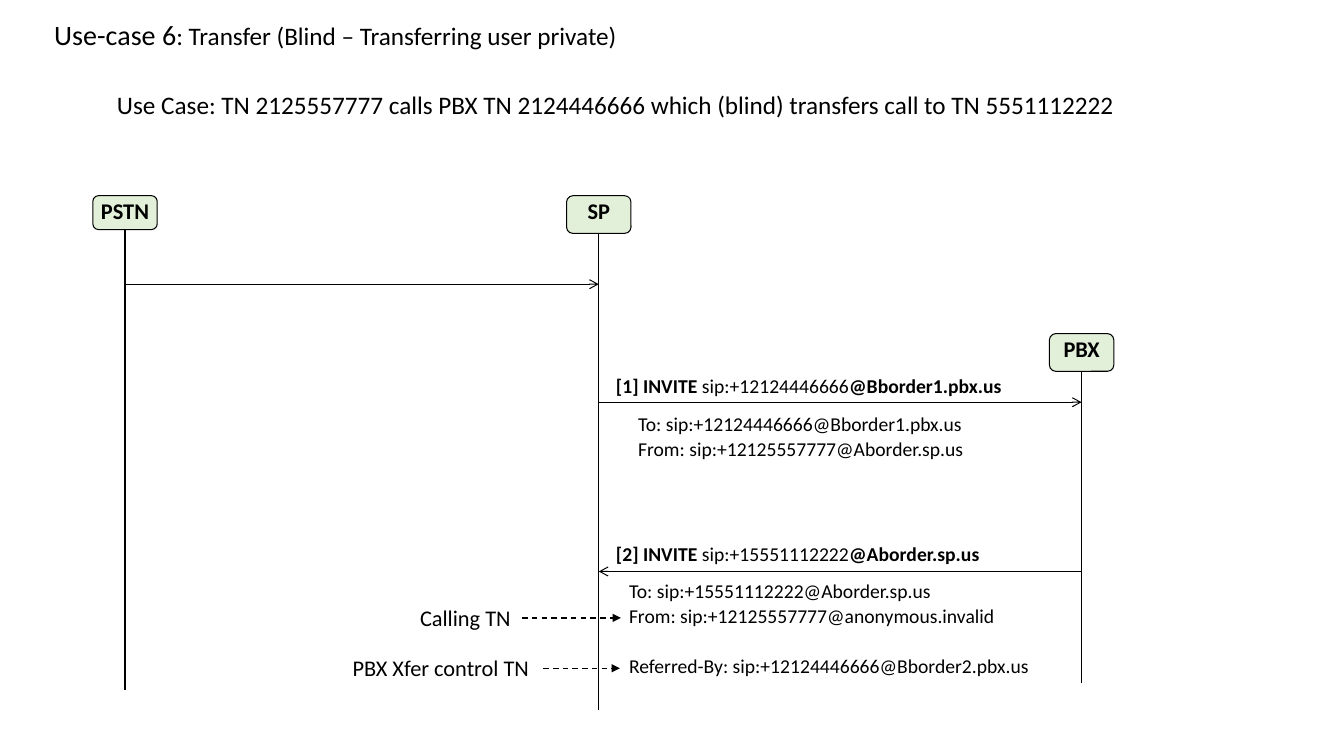
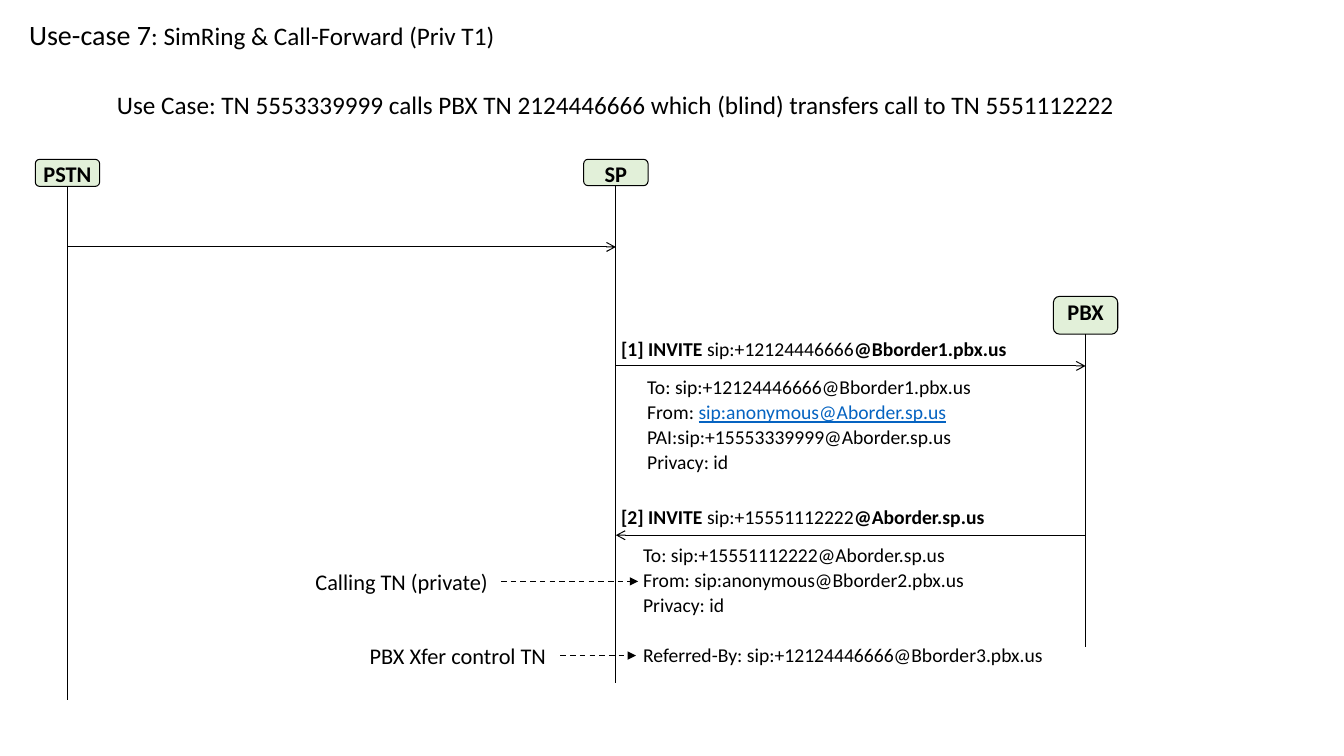
from lxml import etree
from pptx import Presentation
from pptx.dml.color import RGBColor
from pptx.enum.dml import MSO_LINE
from pptx.enum.shapes import MSO_CONNECTOR, MSO_SHAPE
from pptx.enum.text import MSO_ANCHOR, PP_ALIGN
from pptx.oxml.ns import qn
from pptx.util import Pt

FONT, BLACK, GREEN, LINK = "Calibri", "000000", "E2F0D9", "0563C1"
HEAD_W = 46
NOTE_H = 26.6
LINE_GAP, BLOCK_GAP = 2.7, 20.8
BOLD = {"bold": True}
LINKED = {"color": LINK, "underline": True}

# parties: name -> (centre x, head top, head height, lifeline end)
# messages: from, to, y, then label (left, top, target) and body (left, top, blocks of lines)
# notes: text, left, top, width, arrow end x
SLIDES = [
    {
        "title": ("Use-case 6", ": Transfer (Blind – Transferring user private)"),
        "title_left": 31.7,
        "summary": "Use Case: TN 2125557777 calls PBX TN 2124446666 which (blind) "
                   "transfers call to TN 5551112222",
        "parties": {
            "PSTN": (89.3, 139.8, 24.2, 493.2),
            "SP": (427.7, 139.8, 26.9, 506.9),
            "PBX": (772.6, 238.3, 26.9, 488.2),
        },
        "messages": [
            ("PSTN", "SP", 203, None, None),
            ("SP", "PBX", 287.3,
             (430.6, 264.2, "sip:+12124446666", "@Bborder1.pbx.us"),
             (446.4, 295.2, [["To: sip:+12124446666@Bborder1.pbx.us",
                              "From: sip:+12125557777@Aborder.sp.us"]])),
            ("PBX", "SP", 408.2,
             (430.6, 383.8, "sip:+15551112222", "@Aborder.sp.us"),
             (439.9, 414.7, [["To: sip:+15551112222@Aborder.sp.us",
                              "From: sip:+12125557777@anonymous.invalid"],
                             ["Referred-By: sip:+12124446666@Bborder2.pbx.us"]])),
        ],
        "notes": [
            ("Calling TN", 293, 428, 80, 443.5),
            ("PBX Xfer control TN", 244.8, 464, 143.3, 442.8),
        ],
    },
    {
        "title": ("Use-case 7", ": SimRing & Call-Forward (Priv T1)"),
        "title_left": 13.7,
        "summary": "Use Case: TN 5553339999 calls PBX TN 2124446666 which (blind) "
                   "transfers call to TN 5551112222",
        "parties": {
            "PSTN": (48.2, 113.8, 19.4, 499.7),
            "SP": (439.9, 113.8, 18.8, 488.2),
            "PBX": (775.4, 211.7, 27, 462.2),
        },
        "messages": [
            ("PSTN", "SP", 176.4, None, None),
            ("SP", "PBX", 261.4,
             (434.2, 237.6, "sip:+12124446666", "@Bborder1.pbx.us"),
             (452.9, 269.3, [["To: sip:+12124446666@Bborder1.pbx.us",
                              [("From: ", {}), ("sip:anonymous@Aborder.sp.us", LINKED)],
                              "PAI:sip:+15553339999@Aborder.sp.us",
                              "Privacy: id"]])),
            ("PBX", "SP", 382.3,
             (434.2, 357.8, "sip:+15551112222", "@Aborder.sp.us"),
             (450, 388.8, [["To: sip:+15551112222@Aborder.sp.us",
                            "From: sip:anonymous@Bborder2.pbx.us",
                            "Privacy: id"],
                           ["Referred-By: sip:+12124446666@Bborder3.pbx.us"]])),
        ],
        "notes": [
            ("Calling TN (private)", 218.2, 402, 139.7, 455.8),
            ("PBX Xfer control TN", 257, 455, 143.3, 454.3),
        ],
    },
]


def rgb(color):
    return RGBColor.from_string(color)


def set_frame(tf, insets=None, wrap=True, anchor=MSO_ANCHOR.TOP):
    """Set wrapping, anchor and (horizontal, vertical) insets of a text frame."""
    tf.word_wrap, tf.vertical_anchor = wrap, anchor
    if insets:
        tf.margin_left = tf.margin_right = Pt(insets[0])
        tf.margin_top = tf.margin_bottom = Pt(insets[1])


def write(p, content, size, **para_format):
    """Fill a paragraph with a string or a list of (text, font overrides)."""
    for name, value in para_format.items():
        setattr(p, name, value)
    for text, overrides in [(content, {})] if isinstance(content, str) else content:
        r = p.add_run()
        r.text = text
        values = {"name": FONT, "size": Pt(size), "color": BLACK, **overrides}
        r.font.color.rgb = rgb(values.pop("color"))
        for name, value in values.items():
            setattr(r.font, name, value)


def add_text(s, box, paragraphs, size, spacing=1.0, **frame):
    """Add a text box; paragraphs are (content, space before) pairs."""
    sp = s.shapes.add_textbox(*map(Pt, box))
    tf = sp.text_frame
    set_frame(tf, **frame)
    for i, (content, before) in enumerate(paragraphs):
        p = tf.add_paragraph() if i else tf.paragraphs[0]
        write(p, content, size, line_spacing=spacing, space_before=Pt(before))
    return sp


def add_line(s, start, end, width=0.75, arrow=None, dash=None, source=None):
    """Add a line; source is an optional (shape, side) that it starts from."""
    cx = s.shapes.add_connector(MSO_CONNECTOR.STRAIGHT, *map(Pt, (*start, *end)))
    if source:
        cx.begin_connect(*source)
    cx.line.color.rgb = rgb(BLACK)
    cx.line.width = Pt(width)
    if dash:
        cx.line.dash_style = dash
    if arrow:
        etree.SubElement(cx.line._get_or_add_ln(), qn("a:tailEnd"), type=arrow)
    etree.SubElement(cx._element.spPr, qn("a:effectLst"))


def add_party(s, name, x, top, height, end):
    box = (x - HEAD_W / 2, top, HEAD_W, height)
    sp = s.shapes.add_shape(MSO_SHAPE.ROUNDED_RECTANGLE, *map(Pt, box))
    sp.shadow.inherit = False
    sp.fill.solid()
    sp.fill.fore_color.rgb = rgb(GREEN)
    sp.line.color.rgb = rgb(BLACK)
    sp.line.width = Pt(0.75)
    set_frame(sp.text_frame, (0, 0), wrap=False)
    write(sp.text_frame.paragraphs[0], [(name, BOLD)], 16, alignment=PP_ALIGN.CENTER)
    add_line(s, (x, top + height), (x, end), source=(sp, 2))


def add_message(s, number, x1, x2, y, label, body):
    add_line(s, (x1, y), (x2, y), arrow="arrow")
    if label:
        left, top, user, host = label
        runs = [(f"[{number}] INVITE ", BOLD), (user, {}), (host, BOLD)]
        add_text(s, (left, top, 330, 25), [(runs, 0)], 14, 0.9, insets=(9.4, 5))
    if body:
        left, top, blocks = body
        lines = [(line, LINE_GAP if j else BLOCK_GAP if i else 0)
                 for i, block in enumerate(blocks) for j, line in enumerate(block)]
        height = 18 * (len(lines) + len(blocks) - 1)
        add_text(s, (left, top, 335, height), lines, 14, 0.9, insets=(9.4, 0.7))


def add_note(s, text, left, top, width, end):
    sp = add_text(s, (left, top, width, NOTE_H), [(text, 0)], 16, wrap=False)
    y = top + NOTE_H / 2
    add_line(s, (left + width, y), (end, y), 1, "triangle", MSO_LINE.DASH, (sp, 3))


def add_call_flow(prs, data):
    s = prs.slides.add_slide(prs.slide_layouts[6])
    name, rest = data["title"]
    title = [(name, {"size": Pt(20)}), (rest, {})]
    add_text(s, (data["title_left"], 0, 900, 52.6), [(title, 0)], 18, 0.9,
             anchor=MSO_ANCHOR.MIDDLE)
    add_text(s, (76.5, 60, 736, 29), [(data["summary"], 0)], 18, wrap=False)
    parties = data["parties"]
    for name, place in parties.items():
        add_party(s, name, *place)
    for number, (source, target, *rest) in enumerate(data["messages"]):
        add_message(s, number, parties[source][0], parties[target][0], *rest)
    for note in data["notes"]:
        add_note(s, *note)


def main():
    prs = Presentation()
    prs.slide_width, prs.slide_height = Pt(960), Pt(540)
    for data in SLIDES:
        add_call_flow(prs, data)
    prs.save("out.pptx")


if __name__ == "__main__":
    main()
